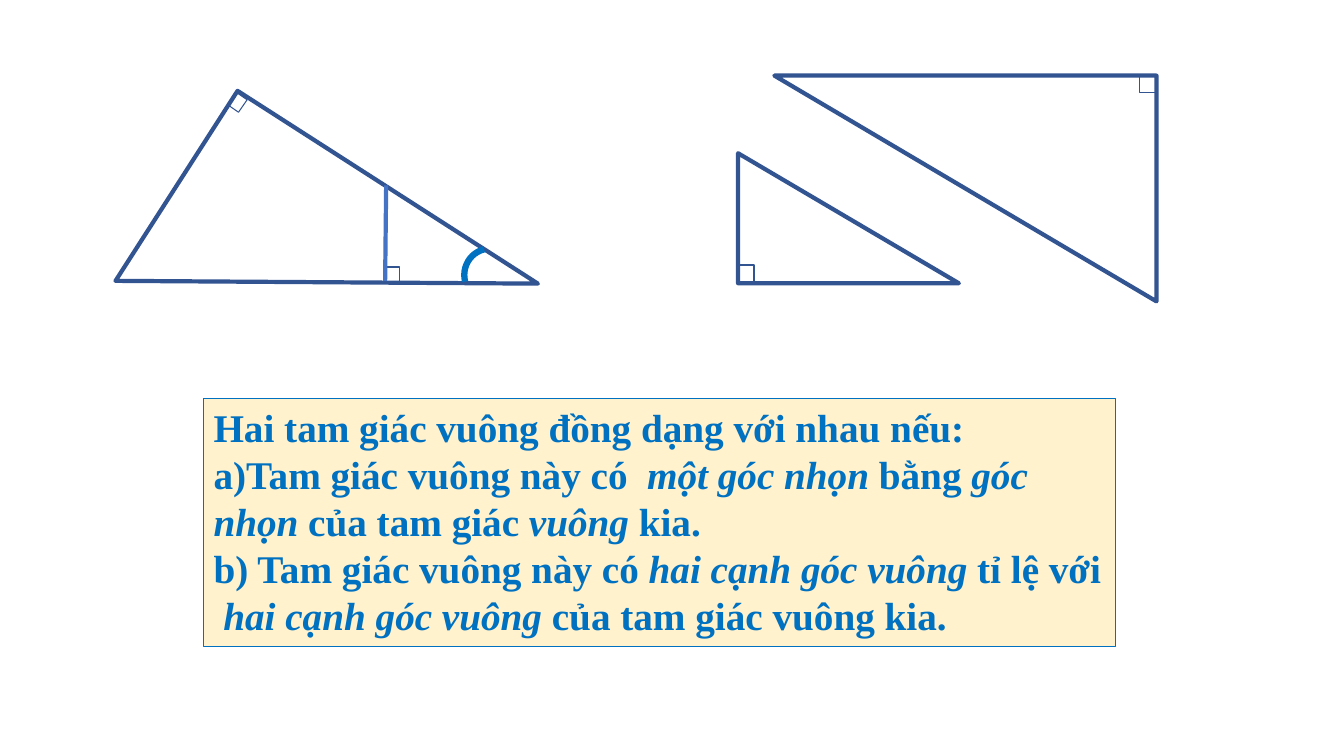
"""Builds a slide on the similarity of right triangles."""
import pptx
import pptx.dml.color
import pptx.enum.shapes
import pptx.enum.text
import pptx.oxml.ns
import pptx.util

KINDS = pptx.enum.shapes.MSO_SHAPE
INCH = pptx.util.Inches
OUTLINE, BLUE, SEGMENT, CREAM = "325491", "0070C0", "4472C4", "FFF2CC"

TRIANGLE, SQUARE, ARC = KINDS.RIGHT_TRIANGLE, KINDS.FLOWCHART_PROCESS, KINDS.ARC

SEPARATE_TRIANGLES = [
    (SQUARE, (11.3, 0.75, 0.16, 0.17), 0, OUTLINE, 1),
    (TRIANGLE, (7.68, 0.75, 3.79, 2.24), 180, OUTLINE, 3),
    (SQUARE, (7.32, 2.63, 0.16, 0.17), 0, OUTLINE, 1),
    (TRIANGLE, (7.32, 1.52, 2.19, 1.29), 0, OUTLINE, 3),
]
NESTED_TRIANGLES = [
    (SQUARE, (2.29, 0.94, 0.13, 0.15), 34.7, OUTLINE, 0.75),
    (SQUARE, (3.83, 2.65, 0.13, 0.15), 0, OUTLINE, 1),
    (TRIANGLE, (2.12, 1.03, 2.24, 3.54), 122.7, OUTLINE, 3),
    (ARC, (4.6, 2.47, 0.53, 0.52), 256, BLUE, 4.5),
]
PERPENDICULAR = (3.83, 1.84, 3.82, 2.79)

RULE_BOX = (2.02, 3.95, 9.04, 2.46)
# Each line alternates upright and italic spans.
RULE_LINES = [
    ["Hai tam giác vuông đồng dạng với nhau nếu:"],
    ["a)Tam giác vuông này có  ", "một góc nhọn ", "bằng ", "góc nhọn ",
     "của tam giác ", "vuông ", "kia."],
    ["b) Tam giác vuông này có ", "hai cạnh góc vuông ", "tỉ lệ với  ",
     "hai cạnh góc vuông ", "của tam giác vuông kia."],
]


def color(value):
    return pptx.dml.color.RGBColor.from_string(value)


def set_line(item, value, points):
    item.line.color.rgb = color(value)
    item.line.width = pptx.util.Pt(points)


def draw_figure(page, parts):
    group = page.shapes.add_group_shape()
    for kind, place, turn, stroke, points in parts:
        shape = group.shapes.add_shape(kind, *map(INCH, place))
        shape.rotation = turn
        shape.shadow.inherit = False
        shape.fill.background()
        set_line(shape, stroke, points)
    return group


def draw_segment(group, ends):
    segment = group.shapes.add_connector(
        pptx.enum.shapes.MSO_CONNECTOR.STRAIGHT, *map(INCH, ends))
    set_line(segment, SEGMENT, 3)
    properties = segment.element.spPr
    properties.append(pptx.oxml.parse_xml(
        "<a:effectLst %s/>" % pptx.oxml.ns.nsdecls("a")))


def write_rule(page):
    box = page.shapes.add_textbox(*map(INCH, RULE_BOX))
    box.fill.solid()
    box.fill.fore_color.rgb = color(CREAM)
    set_line(box, BLUE, 0.75)
    box.text_frame.word_wrap = True
    box.text_frame.auto_size = pptx.enum.text.MSO_AUTO_SIZE.SHAPE_TO_FIT_TEXT
    para = box.text_frame.paragraphs[0]
    for row, spans in enumerate(RULE_LINES):
        if row:
            para.add_line_break()
        for index, text in enumerate(spans):
            span = para.add_run()
            span.text = text
            span.font.name = "Times New Roman"
            span.font.size = pptx.util.Pt(28)
            span.font.bold = True
            span.font.italic = index % 2 == 1
            span.font.color.rgb = color(BLUE)


def main():
    deck = pptx.Presentation()
    deck.slide_width, deck.slide_height = INCH(13.33), INCH(7.5)
    page = deck.slides.add_slide(deck.slide_layouts[6])
    write_rule(page)
    draw_figure(page, SEPARATE_TRIANGLES)
    nested = draw_figure(page, NESTED_TRIANGLES)
    draw_segment(nested, PERPENDICULAR)
    deck.save("out.pptx")


if __name__ == "__main__":
    main()
